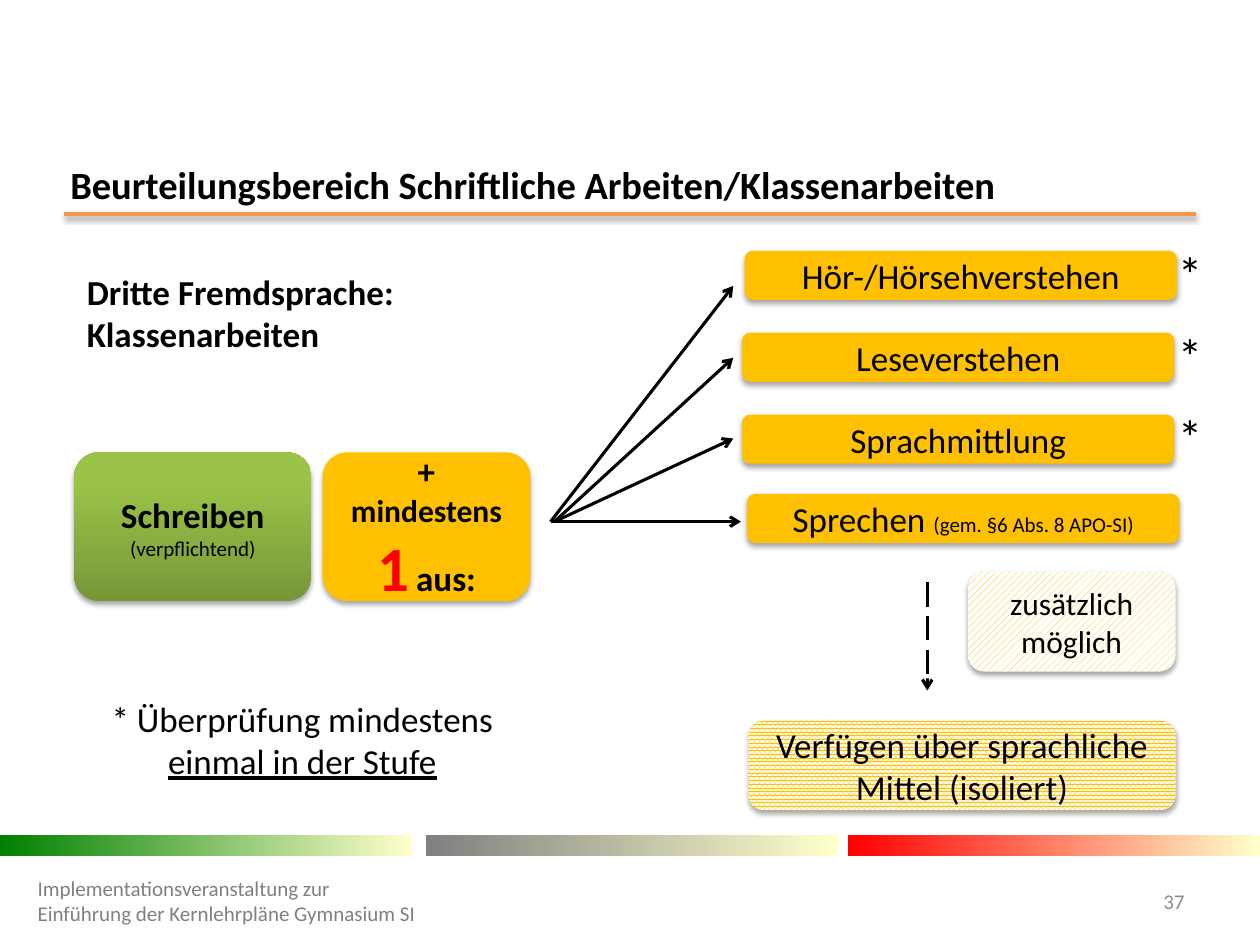
from lxml import etree
from pptx import Presentation
from pptx.dml.color import RGBColor
from pptx.enum.dml import MSO_LINE, MSO_PATTERN
from pptx.enum.shapes import MSO_CONNECTOR, MSO_SHAPE
from pptx.enum.text import MSO_ANCHOR, PP_ALIGN
from pptx.oxml.ns import qn
from pptx.util import Pt

RECT, ROUNDED = MSO_SHAPE.RECTANGLE, MSO_SHAPE.ROUNDED_RECTANGLE
STRAIGHT, LONG_DASH = MSO_CONNECTOR.STRAIGHT, MSO_LINE.LONG_DASH
DOTTED, STRIPED = MSO_PATTERN.PERCENT_80, MSO_PATTERN.WIDE_UPWARD_DIAGONAL
TOP, MIDDLE = MSO_ANCHOR.TOP, MSO_ANCHOR.MIDDLE
LEFT, CENTER, RIGHT = PP_ALIGN.LEFT, PP_ALIGN.CENTER, PP_ALIGN.RIGHT

BLACK = RGBColor(0x00, 0x00, 0x00)
WHITE = RGBColor(0xFF, 0xFF, 0xFF)
RED = RGBColor(0xFF, 0x00, 0x00)
AMBER = RGBColor(0xFF, 0xC0, 0x00)
ORANGE = RGBColor(0xF7, 0x96, 0x46)
CREAM = RGBColor(0xFF, 0xFF, 0xCC)
GREEN = RGBColor(0x00, 0x80, 0x00)
GRAY = RGBColor(0x80, 0x80, 0x80)
PAGE_GRAY = RGBColor(0x8C, 0x8C, 0x8C)
OLIVE = RGBColor(0x77, 0x97, 0x37)
LIME = RGBColor(0x9B, 0xC3, 0x48)


class SlideBuilder:
    """Holds the text style and the current slide, and draws each kind of element."""

    style = {"name": "Calibri", "size": Pt(20), "color": BLACK}

    def __init__(self, slide):
        self.slide = slide

    def fill_text(self, shape, paragraphs, align, anchor):
        frame = shape.text_frame
        frame.word_wrap = True
        frame.vertical_anchor = anchor
        for index, runs in enumerate(paragraphs):
            paragraph = frame.paragraphs[0] if index == 0 else frame.add_paragraph()
            paragraph.alignment = align
            for text, changes in runs:
                run = paragraph.add_run()
                run.text = text
                for key, value in {**self.style, **changes}.items():
                    if key == "color":
                        run.font.color.rgb = value
                    else:
                        setattr(run.font, key, value)

    def text(self, bounds, paragraphs, align=LEFT, anchor=TOP):
        box = self.slide.shapes.add_textbox(*map(Pt, bounds))
        self.fill_text(box, paragraphs, align, anchor)

    def cast_shadow(self, element, opacity, distance):
        effects = etree.SubElement(element.spPr, qn("a:effectLst"))
        if opacity:
            shadow = etree.SubElement(
                effects, qn("a:outerShdw"), blurRad=str(Pt(3.1)),
                dist=str(Pt(distance)), dir="5400000", rotWithShape="0")
            color = etree.SubElement(shadow, qn("a:srgbClr"), val=str(BLACK))
            etree.SubElement(color, qn("a:alpha"), val=str(opacity * 1000))

    def shape(self, kind, bounds, shadow):
        shape = self.slide.shapes.add_shape(kind, *map(Pt, bounds))
        shape.line.fill.background()
        self.cast_shadow(shape.element, shadow, 1.8)
        return shape

    def gradient(self, shape, angle, stops):
        shape.fill.gradient()
        shape.fill.gradient_angle = angle
        for stop, (position, color) in zip(shape.fill.gradient_stops, stops):
            stop.position = position
            stop.color.rgb = color

    def bar(self, bounds, start):
        bar = self.shape(RECT, bounds, 0)
        self.gradient(bar, 0, [(0, start), (1, CREAM)])

    def card(self, bounds, paragraphs, color=AMBER, pattern=None, shadow=35):
        card = self.shape(ROUNDED, bounds, shadow)
        if pattern:
            card.fill.patterned()
            card.fill.pattern = pattern
            card.fill.fore_color.rgb = color
            card.fill.back_color.rgb = WHITE
        else:
            card.fill.solid()
            card.fill.fore_color.rgb = color
        self.fill_text(card, paragraphs, CENTER, MIDDLE)
        return card

    def line(self, start, end, color=BLACK, width=1.75, shadow=0, dash=None, arrow=True):
        connector = self.slide.shapes.add_connector(STRAIGHT, *map(Pt, start + end))
        connector.line.color.rgb = color
        connector.line.width = Pt(width)
        if dash:
            connector.line.dash_style = dash
        if arrow:
            outline = connector.element.spPr.find(qn("a:ln"))
            etree.SubElement(outline, qn("a:tailEnd"), type="arrow")
        self.cast_shadow(connector.element, shadow, 1.6)


def main():
    presentation = Presentation()
    presentation.slide_width, presentation.slide_height = Pt(720), Pt(540)
    page = SlideBuilder(presentation.slides.add_slide(presentation.slide_layouts[6]))
    bold, small = {"bold": True}, {"size": Pt(12)}
    medium, footer = {"size": Pt(18)}, {"size": Pt(12), "color": GRAY}

    page.line((36.7, 122.4), (683.3, 122.4), ORANGE, 2, shadow=38, arrow=False)
    for left, color in ((0, GREEN), (243.4, GRAY), (484.6, RED)):
        page.bar((left, 477.4, 235.4, 11.5), color)

    title = "Beurteilungsbereich Schriftliche Arbeiten/Klassenarbeiten"
    page.text((33.1, 88.5, 643, 34), [[(title, {"size": Pt(22), **bold})]])
    page.text((42.5, 151.2, 289.4, 77.8),
              [[("Dritte Fremdsprache: Klassenarbeiten", bold)]])

    writing = page.card((42.5, 258.5, 135.4, 85),
                        [[("Schreiben", bold)], [("(verpflichtend)", small)]])
    page.gradient(writing, 90, [(0, OLIVE), (0.8, LIME)])
    page.card((184.3, 258.5, 118.8, 85), [[
        ("+", bold),
        (" mindestens ", {**medium, **bold}),
        ("1", {"size": Pt(36), "color": RED, **bold}),
        (" ", {**medium, **bold}),
        ("aus:", bold)]])

    option_top, option_step, option_size = 143.3, 46.8, (247, 28.1)
    options = (("Hör-/Hörsehverstehen", 425.5),
               ("Leseverstehen", 424.1),
               ("Sprachmittlung", 424.1))
    for index, (skill, left) in enumerate(options):
        top = option_top + index * option_step
        page.card((left, top, *option_size), [[(skill, {})]])
        page.text((666, top - 7.9, 25.9, 41), [[("*", {"size": Pt(28)})]])
    page.card((427, 282.2, *option_size),
              [[("Sprechen ", {}), ("(gem. §6 Abs. 8 APO-SI)", small)]])

    for left, tip in ((314.6, (419, 163.4)), (316.8, (419, 204.5)),
                      (316.8, (419, 250.6)), (314.6, (423.4, 298.1))):
        page.line((left, 298.1), tip)

    page.line((529.9, 332.6), (529.9, 394.6), dash=LONG_DASH)
    page.card((553, 326.9, 118.8, 56.9), [[("zusätzlich möglich", medium)]],
              pattern=STRIPED)
    page.card((427.7, 411.8, 244.1, 51.1),
              [[("Verfügen über sprachliche Mittel (isoliert)", {})]], pattern=DOTTED)
    page.card((42.5, 383, 260.6, 79.2),
              [[("* Überprüfung mindestens", {})],
               [("einmal in der Stufe", {"underline": True})]], WHITE, shadow=0)

    page.text((14.4, 500.4, 233.3, 28.8),
              [[("Implementationsveranstaltung zur", footer)],
               [("Einführung der Kernlehrpläne Gymnasium SI", footer)]], anchor=MIDDLE)
    page.text((637.9, 500.4, 46.1, 28.8),
              [[("37", {**small, "color": PAGE_GRAY})]], RIGHT, MIDDLE)
    presentation.save("out.pptx")


if __name__ == "__main__":
    main()
